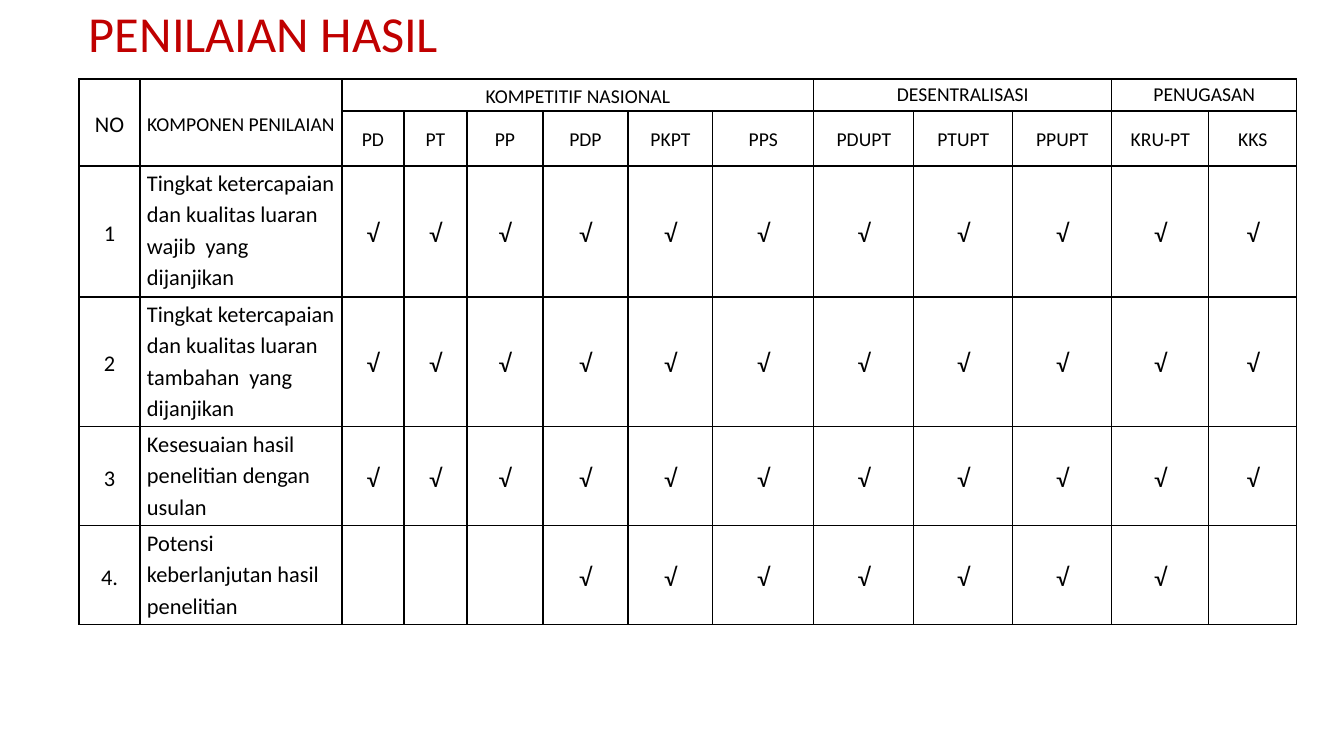
from lxml import etree
from pptx import Presentation
from pptx import util as u
from pptx.dml.color import RGBColor
from pptx.enum import text
from pptx.oxml import ns

PX = 914400 / 100.8
RED = RGBColor(0xC0, 0x00, 0x00)
BLACK = RGBColor(0x00, 0x00, 0x00)
FONT = "Calibri"
CENTER, LEFT = text.PP_ALIGN.CENTER, text.PP_ALIGN.LEFT
MIDDLE, TOP = text.MSO_ANCHOR.MIDDLE, text.MSO_ANCHOR.TOP

COLUMN_WIDTHS = [61, 202, 62, 63, 76, 85, 85, 101, 100, 99, 99, 97, 88]
ROW_HEIGHTS = [32, 55, 131, 130, 99, 99]

# Heading, first column, row span, column span, size, anchor, space after
HEADINGS = [
    ("NO", 0, 2, 1, 16, MIDDLE, 10),
    ("KOMPONEN PENILAIAN", 1, 2, 1, 14, MIDDLE, 0),
    ("KOMPETITIF NASIONAL", 2, 1, 6, 14, MIDDLE, 0),
    ("DESENTRALISASI", 8, 1, 3, 14, TOP, 0),
    ("PENUGASAN", 11, 1, 2, 14, TOP, 0),
]
SCHEMES = ["PD", "PT", "PP", "PDP", "PKPT", "PPS", "PDUPT", "PTUPT", "PPUPT", "KRU-PT", "KKS"]

# Number, component, schemes it does not apply to
COMPONENTS = [
    ("1", "Tingkat ketercapaian dan kualitas luaran wajib  yang dijanjikan", ()),
    ("2", "Tingkat ketercapaian dan kualitas luaran tambahan  yang dijanjikan", ()),
    ("3", "Kesesuaian hasil penelitian dengan usulan", ()),
    ("4.", "Potensi keberlanjutan hasil penelitian", ("PD", "PT", "PP", "KKS")),
]


def px(length):
    return u.Emu(round(length * PX))


def add_span(para, words, size, color):
    span = para.add_run()
    span.text = words
    span.font.name = FONT
    span.font.size = u.Pt(size)
    span.font.color.rgb = color


def write_cell(cell, words, size, align=CENTER, anchor=MIDDLE, after=0):
    cell.vertical_anchor = anchor
    para = cell.text_frame.paragraphs[0]
    para.alignment = align
    para.line_spacing = 1.15
    para.space_after = u.Pt(after)
    add_span(para, words, size, BLACK)


def format_cell(cell):
    cell.margin_left = cell.margin_right = px(7)
    cell.margin_top = cell.margin_bottom = 0
    cell.fill.background()
    properties = cell._tc.get_or_add_tcPr()
    for position, side in enumerate(("lnL", "lnR", "lnT", "lnB")):
        line = etree.Element(ns.qn("a:" + side), w=str(u.Pt(1)))
        solid = etree.SubElement(line, ns.qn("a:solidFill"))
        etree.SubElement(solid, ns.qn("a:srgbClr"), val=str(BLACK))
        properties.insert(position, line)


def add_title(page, left, top, width, height):
    box = page.shapes.add_textbox(px(left), px(top), px(width), px(height))
    frame = box.text_frame
    frame.word_wrap = True
    frame.margin_top = px(7)
    para = frame.paragraphs[0]
    para.line_spacing = 0.9
    add_span(para, "PENILAIAN HASIL", 36, RED)


def add_assessment_table(page, left, top):
    table = page.shapes.add_table(
        len(ROW_HEIGHTS), len(COLUMN_WIDTHS), px(left), px(top),
        px(sum(COLUMN_WIDTHS)), px(sum(ROW_HEIGHTS))).table
    table.first_row = table.horz_banding = False
    for column, width in zip(table.columns, COLUMN_WIDTHS):
        column.width = px(width)
    for row, height in zip(table.rows, ROW_HEIGHTS):
        row.height = px(height)
    for cell in table.iter_cells():
        format_cell(cell)

    # Two heading rows
    for words, first, rows, columns, size, anchor, after in HEADINGS:
        cell = table.cell(0, first)
        if rows * columns > 1:
            cell.merge(table.cell(rows - 1, first + columns - 1))
        write_cell(cell, words, size, anchor=anchor, after=after)
    for column, scheme in enumerate(SCHEMES, 2):
        write_cell(table.cell(1, column), scheme, 14)

    # One row per component, ticked where it applies
    for row, (number, component, excluded) in enumerate(COMPONENTS, 2):
        write_cell(table.cell(row, 0), number, 16, after=10)
        write_cell(table.cell(row, 1), component, 16, LEFT, TOP)
        for column, scheme in enumerate(SCHEMES, 2):
            if scheme not in excluded:
                write_cell(table.cell(row, column), "√", 18)


def main():
    deck = Presentation()
    deck.slide_width, deck.slide_height = px(1344), px(756)
    page = deck.slides.add_slide(deck.slide_layouts[6])
    add_title(page, 79, 2, 1159, 35)
    add_assessment_table(page, 79, 79)
    deck.save("out.pptx")


if __name__ == "__main__":
    main()
